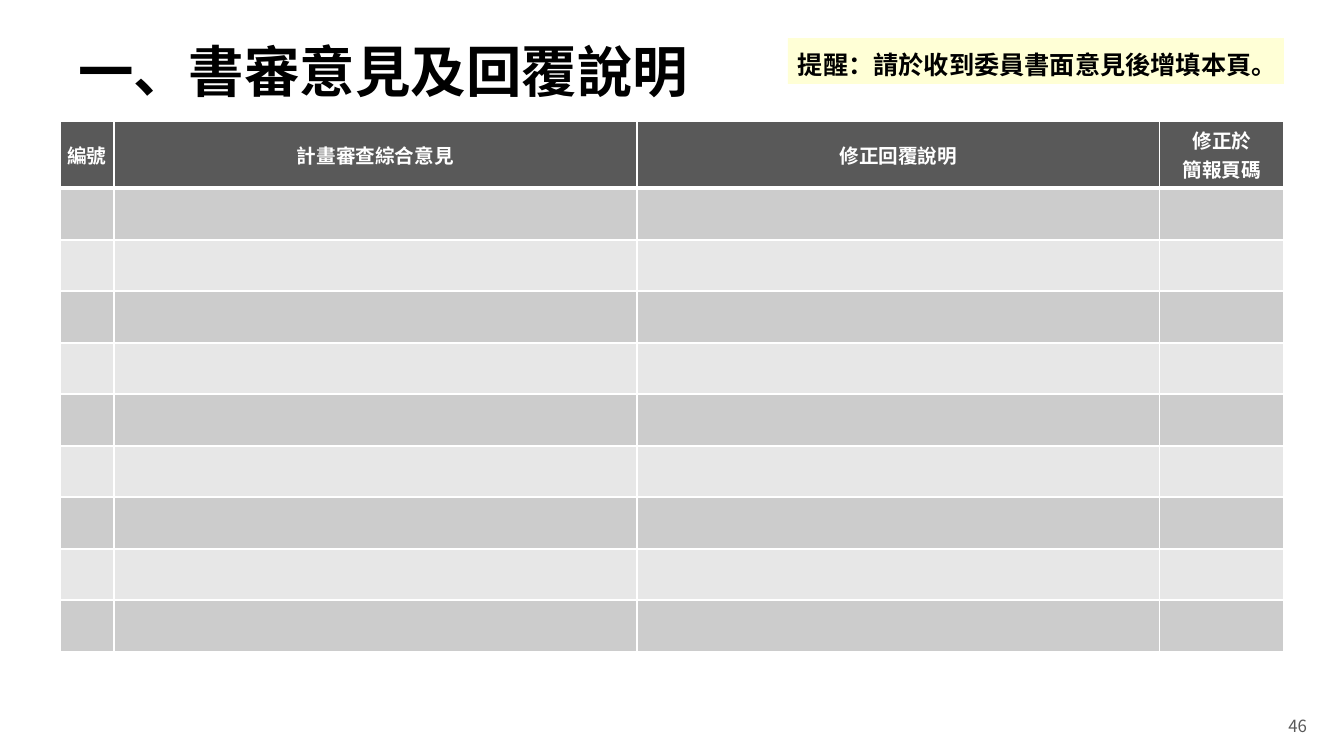
import dataclasses

import pptx
import pptx.dml.color
import pptx.enum.shapes
import pptx.enum.text
import pptx.oxml
import pptx.oxml.ns
import pptx.util

ALIGN = pptx.enum.text.PP_ALIGN
ANCHOR = pptx.enum.text.MSO_ANCHOR
NS = pptx.oxml.ns.nsdecls("a")


@dataclasses.dataclass(frozen=True)
class Theme:
    font: str = "Noto Sans CJK SC"
    ink: str = "000000"
    white: str = "FFFFFF"
    gray: str = "595959"
    bands: tuple = ("CCCCCC", "E7E7E7")
    note: str = "FFFFCC"
    title_size: float = 39.6
    note_size: int = 18
    head_size: int = 14
    page_size: int = 12


def px(count):
    return pptx.util.Emu(round(count * 914400 / 100.8))


def rgb(code):
    return pptx.dml.color.RGBColor.from_string(code)


class Page:
    def __init__(self, deck, theme):
        self.theme = theme
        self.slide = deck.slides.add_slide(deck.slide_layouts[5])

    def label(self, frame, text, size, color, bold=True, align=ALIGN.LEFT, lead=None):
        frame.text = text
        for para in frame.paragraphs:
            para.alignment = align
            para.line_spacing = lead
            for run in para.runs:
                font = run.font
                font.name = self.theme.font
                font.size = pptx.util.Pt(size)
                font.bold = bold
                font.color.rgb = rgb(color)
                east = f'<a:ea {NS} typeface="{self.theme.font}"/>'
                run._r.get_or_add_rPr().append(pptx.oxml.parse_xml(east))

    def fit(self, frame, anchor, wrap=True):
        frame.auto_size = pptx.enum.text.MSO_AUTO_SIZE.NONE
        frame.vertical_anchor = anchor
        frame.word_wrap = wrap

    def title(self, text, left, top, width, height):
        shape = self.slide.shapes.title
        shape.left, shape.top = px(left), px(top)
        shape.width, shape.height = px(width), px(height)
        self.fit(shape.text_frame, ANCHOR.MIDDLE)
        self.label(shape.text_frame, text, self.theme.title_size, self.theme.ink, lead=0.9)

    def number(self, text, left, top, width, height):
        box = self.slide.shapes.add_textbox(px(left), px(top), px(width), px(height))
        self.fit(box.text_frame, ANCHOR.MIDDLE)
        self.label(box.text_frame, text, self.theme.page_size, self.theme.gray, False, ALIGN.RIGHT)

    def note(self, text, left, top, width, height):
        kind = pptx.enum.shapes.MSO_SHAPE.RECTANGLE
        box = self.slide.shapes.add_shape(kind, px(left), px(top), px(width), px(height))
        box.shadow.inherit = False
        box.line.fill.background()
        box.fill.solid()
        box.fill.fore_color.rgb = rgb(self.theme.note)
        tint = box._element.spPr.find(".//" + pptx.oxml.ns.qn("a:srgbClr"))
        tint.append(pptx.oxml.parse_xml(f'<a:alpha {NS} val="80000"/>'))
        self.fit(box.text_frame, ANCHOR.TOP, False)
        self.label(box.text_frame, text, self.theme.note_size, self.theme.ink, lead=1.2)

    def paint(self, cell, color, top, base):
        props = cell._tc.get_or_add_tcPr()
        for side, width in (("L", 1), ("R", 1), ("T", top), ("B", base)):
            props.append(pptx.oxml.parse_xml(
                f'<a:ln{side} {NS} w="{pptx.util.Pt(width)}"><a:solidFill>'
                f'<a:srgbClr val="{self.theme.white}"/></a:solidFill></a:ln{side}>'))
        cell.fill.solid()
        cell.fill.fore_color.rgb = rgb(color)

    def table(self, heads, widths, heights, left, top):
        frame = self.slide.shapes.add_table(
            len(heights), len(widths), px(left), px(top), px(sum(widths)), px(sum(heights)))
        table = frame.table
        for column, width in zip(table.columns, widths):
            column.width = px(width)
        for row, height in zip(table.rows, heights):
            row.height = px(height)
        for cell, head in zip(table.rows[0].cells, heads):
            self.paint(cell, self.theme.gray, 1, 3)
            cell.margin_left = cell.margin_right = px(5)
            cell.margin_top = cell.margin_bottom = px(5)
            cell.vertical_anchor = ANCHOR.MIDDLE
            self.label(cell.text_frame, head, self.theme.head_size, self.theme.white,
                       align=ALIGN.CENTER)
        for index in range(1, len(heights)):
            for cell in table.rows[index].cells:
                self.paint(cell, self.theme.bands[(index - 1) % 2], 3 if index == 1 else 1, 1)


def main():
    deck = pptx.Presentation()
    deck.slide_width, deck.slide_height = px(1344), px(756)
    page = Page(deck, Theme())
    page.title("一、書審意見及回覆說明", 68, 38, 1210, 74)
    page.number("46", 1015, 714, 302, 24)
    heads = ["編號", "計畫審查綜合意見", "修正回覆說明", "修正於\n簡報頁碼"]
    heights = [44] + [52 - index % 2 for index in range(9)]
    page.table(heads, [54, 523, 523, 124], heights, 60, 121)
    page.note("提醒：請於收到委員書面意見後增填本頁。", 788, 38, 496, 46)
    deck.save("out.pptx")


if __name__ == "__main__":
    main()
